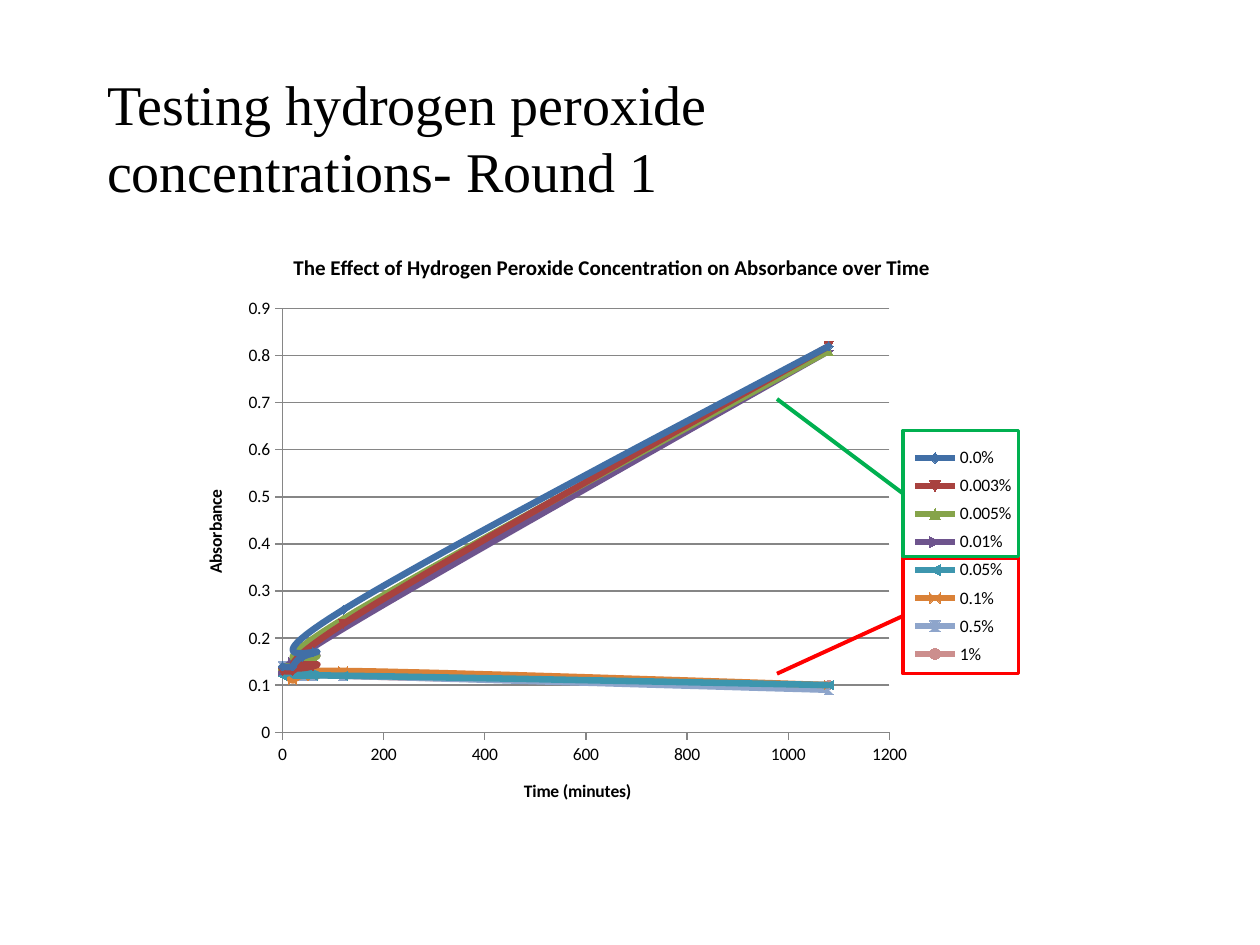
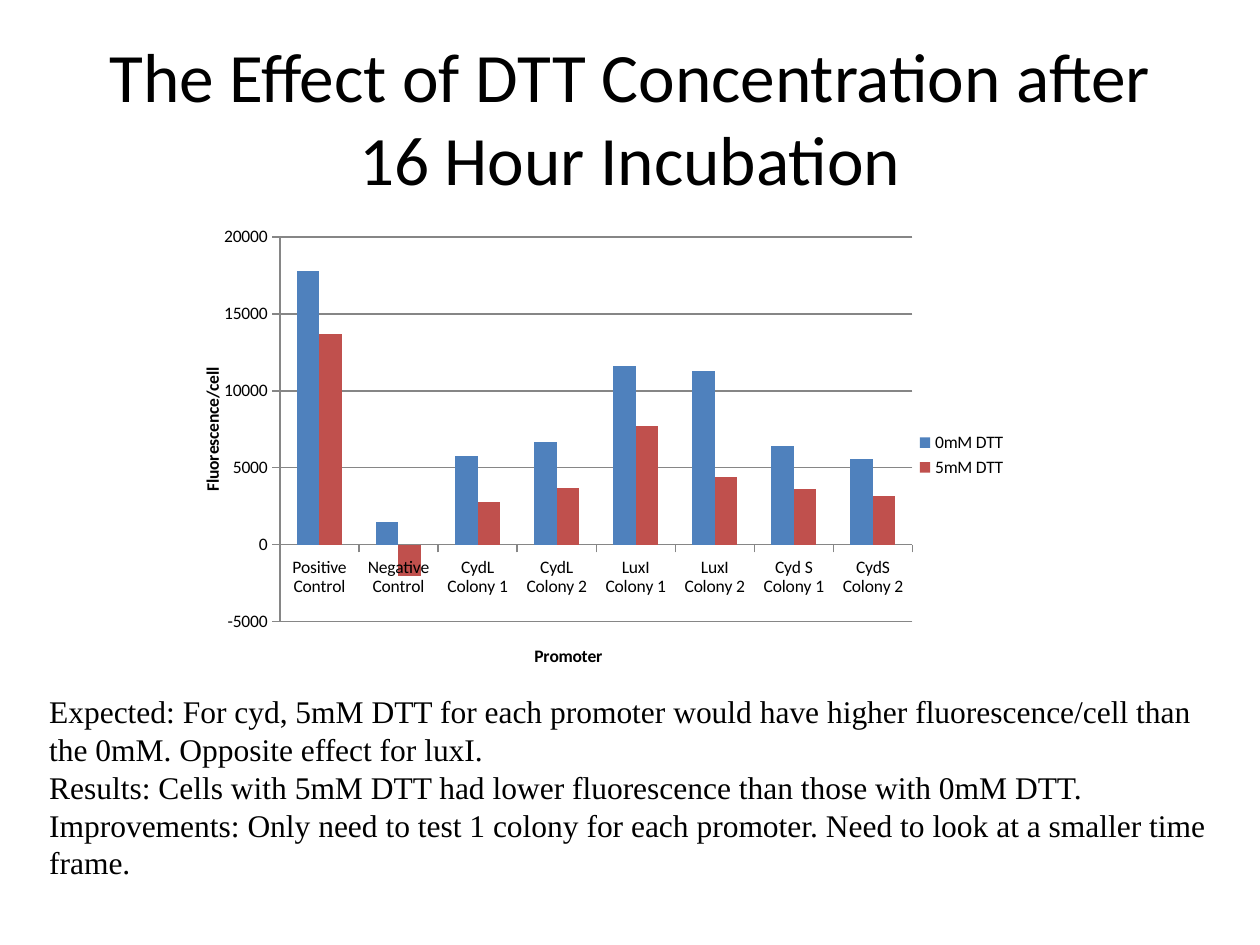
from lxml.etree import SubElement
from pptx import Presentation
from pptx.chart.data import CategoryChartData, XyChartData
from pptx.dml.color import RGBColor
from pptx.enum.chart import XL_CHART_TYPE, XL_LEGEND_POSITION, XL_TICK_MARK
from pptx.enum.shapes import MSO_CONNECTOR, MSO_SHAPE
from pptx.enum.text import MSO_ANCHOR, MSO_AUTO_SIZE, PP_ALIGN
from pptx.oxml.ns import qn
from pptx.util import Pt

BLACK, GRID, GREEN, RED = "000000", "868686", "00B050", "FF0000"
SERIF, SANS = "Times New Roman", "Calibri"


def paint(target, color, face=None, size=None, bold=False):
    if face:
        target.name, target.size, target.bold = face, Pt(size), bold
    if hasattr(target, "solid"):
        target.solid()
        target = target.fore_color
    elif hasattr(target, "color"):
        target = target.color
    target.rgb = RGBColor.from_string(color)


def place(part, index, area, inner=False):
    for old in part.findall(qn("c:layout")):
        part.remove(old)
    layout = SubElement(part, qn("c:layout"))
    part.insert(index, layout)
    manual = SubElement(layout, qn("c:manualLayout"))
    rules = [("layoutTarget", "inner")] if inner else []
    rules += [("xMode", "edge"), ("yMode", "edge"), *zip("xywh", area)]
    for key, value in rules:
        SubElement(manual, qn("c:" + key)).set("val", str(value))


deck = Presentation()
deck.slide_width, deck.slide_height = Pt(720), Pt(540)

titles = [
    ("Testing hydrogen peroxide concentrations- Round 1", (54, 36, 488, 100),
     SERIF, 32, PP_ALIGN.LEFT, MSO_ANCHOR.TOP, 6.4),
    ("The Effect of DTT Concentration after 16 Hour Incubation", (36, 21.6, 648, 90),
     SANS, 39.6, PP_ALIGN.CENTER, MSO_ANCHOR.MIDDLE, 0),
]
slides = []
for words, box, face, size, align, anchor, before in titles:
    slide = deck.slides.add_slide(deck.slide_layouts[5])
    slides.append(slide)
    title = slide.shapes.title
    title.left, title.top, title.width, title.height = map(Pt, box)
    frame = title.text_frame
    frame.word_wrap = True
    frame.auto_size = MSO_AUTO_SIZE.NONE
    frame.vertical_anchor = anchor
    para = frame.paragraphs[0]
    para.alignment, para.space_before = align, Pt(before)
    run = para.add_run()
    run.text = words
    paint(run.font, BLACK, face, size)

times = [0, 20, 40, 60, 120, 1080]
doses = {
    "0.0%": [0.14, 0.14, 0.16, 0.17, 0.26, 0.82],
    "0.003%": [0.13, 0.13, 0.14, 0.14, 0.23, 0.82],
    "0.005%": [0.14, 0.14, 0.15, 0.16, 0.24, 0.81],
    "0.01%": [0.13, 0.15, 0.15, 0.16, 0.22, 0.81],
    "0.05%": [0.12, 0.13, 0.13, 0.12, 0.12, 0.1],
    "0.1%": [0.13, 0.11, 0.12, 0.12, 0.13, 0.1],
    "0.5%": [0.14, 0.13, 0.12, 0.12, 0.12, 0.09],
    "1%": [0.13, 0.12, 0.12, 0.13, 0.12, 0.1],
}
curves = XyChartData(number_format="General")
for name, values in doses.items():
    series = curves.add_series(name)
    for time, value in zip(times, values):
        series.add_data_point(time, value)

bars = CategoryChartData(number_format="General")
bars.categories = ["Positive Control", "Negative Control", "CydL Colony 1", "CydL Colony 2",
                   "LuxI Colony 1", "LuxI Colony 2", "Cyd S Colony 1", "CydS Colony 2"]
bars.add_series("0mM DTT", [17800, 1500, 5800, 6700, 11600, 11300, 6400, 5600])
bars.add_series("5mM DTT", [13700, -2000, 2800, 3700, 7700, 4400, 3600, 3200])

plans = [
    (XL_CHART_TYPE.XY_SCATTER_SMOOTH, curves, (102, 132, 495.5, 341),
     "Time (minutes)", "Absorbance", (0, 0.9, 0.1), (0.12, 0.13, 0.7, 0.71)),
    (XL_CHART_TYPE.COLUMN_CLUSTERED, bars, (113, 127.5, 469.5, 265),
     "Promoter", "Fluorescence/cell", (-5000, 20000, 5000), (0.1, 0.03, 0.77, 0.83)),
]
charts = []
for slide, (kind, data, box, below, beside, scale, area) in zip(slides, plans):
    chart = slide.shapes.add_chart(kind, *map(Pt, box), data).chart
    charts.append(chart)
    paint(chart.font, BLACK, SANS, 10)
    chart.has_title = False
    chart.has_legend = True
    chart.legend.position = XL_LEGEND_POSITION.RIGHT
    chart.legend.include_in_layout = False
    chart.plots[0].vary_by_categories = False
    for axis, words in ((chart.category_axis, below), (chart.value_axis, beside)):
        axis.has_major_gridlines = False
        axis.major_tick_mark = XL_TICK_MARK.OUTSIDE
        axis.minor_tick_mark = XL_TICK_MARK.NONE
        paint(axis.format.line, GRID)
        axis.format.line.width = Pt(0.75)
        run = axis.axis_title.text_frame.paragraphs[0].add_run()
        run.text = words
        paint(run.font, BLACK, SANS, 10, True)
    axis = chart.value_axis
    axis.minimum_scale, axis.maximum_scale, axis.major_unit = scale
    axis.has_major_gridlines = True
    paint(axis.major_gridlines.format.line, GRID)
    axis.major_gridlines.format.line.width = Pt(0.75)
    place(chart.element.find(".//" + qn("c:plotArea")), 0, area, True)

graph, columns = charts
graph.has_title = True
graph.chart_title.include_in_layout = False
run = graph.chart_title.text_frame.paragraphs[0].add_run()
run.text = "The Effect of Hydrogen Peroxide Concentration on Absorbance over Time"
paint(run.font, BLACK, SANS, 12, True)
place(graph.element.find(".//" + qn("c:legend")), 1, (0.84, 0.35, 0.13, 0.39))
axis = graph.category_axis
axis.minimum_scale, axis.maximum_scale, axis.major_unit = 0, 1200, 200
hues = ["416FA6", "A8423F", "86A44A", "6E548D", "3D96AE", "DA8137", "8EA5CB", "CC8E8D"]
for series, hue in zip(graph.plots[0].series, hues):
    paint(series.format.line, hue)
    series.format.line.width = Pt(3.75)
    paint(series.marker.format.fill, hue)
    paint(series.marker.format.line, hue)
for smooth in graph.element.iter(qn("c:smooth")):
    smooth.set("val", "1")

columns.plots[0].gap_width = 150
columns.plots[0].overlap = 0
for series, hue in zip(columns.plots[0].series, ("4F81BD", "C0504D")):
    series.invert_if_negative = False
    paint(series.format.fill, hue)

shapes = slides[0].shapes
for color, top, height, start, end in ((RED, 319, 66, 352, 385), (GREEN, 246, 72, 282, 228)):
    group = shapes.add_shape(MSO_SHAPE.RECTANGLE, Pt(516), Pt(top), Pt(66), Pt(height))
    group.shadow.inherit = False
    group.fill.background()
    paint(group.line, color)
    group.line.width = Pt(2)
    link = shapes.add_connector(MSO_CONNECTOR.STRAIGHT, Pt(516), Pt(start), Pt(444), Pt(end))
    paint(link.line, color)
    link.line.width = Pt(2.25)
    SubElement(link.element.spPr, qn("a:effectLst"))

notes = [
    "Expected: For cyd, 5mM DTT for each promoter would have higher fluorescence/cell than "
    "the 0mM. Opposite effect for luxI.",
    "Results: Cells with 5mM DTT had lower fluorescence than those with 0mM DTT.",
    "Improvements: Only need to test 1 colony for each promoter. Need to look at a smaller "
    "time frame.",
]
frame = slides[1].shapes.add_textbox(Pt(21), Pt(392), Pt(686), Pt(117)).text_frame
frame.word_wrap = True
frame.auto_size = MSO_AUTO_SIZE.SHAPE_TO_FIT_TEXT
for rank, words in enumerate(notes):
    para = frame.add_paragraph() if rank else frame.paragraphs[0]
    run = para.add_run()
    run.text = words
    paint(run.font, BLACK, SERIF, 18)

deck.save("out.pptx")
